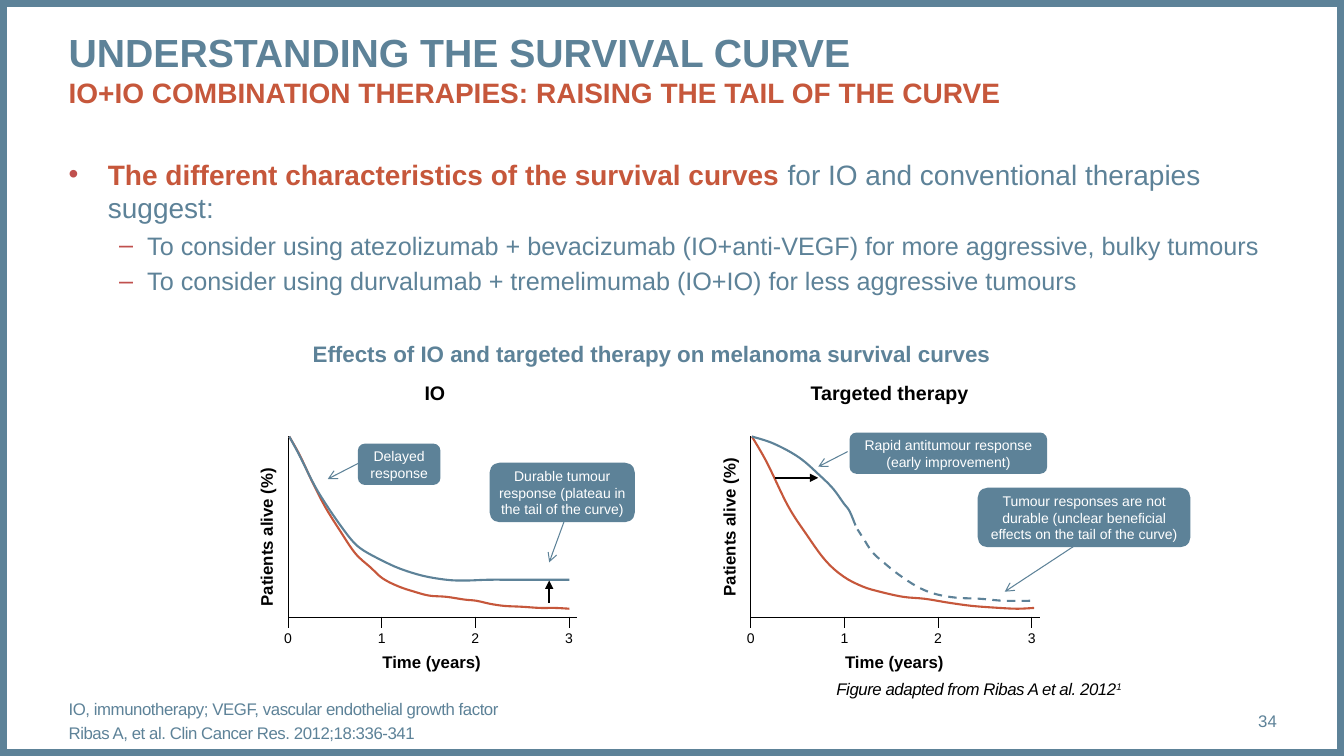
from lxml import etree
from pptx import Presentation
from pptx.dml.color import RGBColor
from pptx.enum import dml, shapes, text
from pptx.oxml import ns
from pptx.util import Cm, Pt

BLUE = RGBColor(0x5D, 0x82, 0x98)
RED = RGBColor(0xC6, 0x57, 0x3B)
BULLET = "C0504D"
BLACK = RGBColor(0, 0, 0)
WHITE = RGBColor(255, 255, 255)
LEFT, TOP, MIDDLE = text.PP_ALIGN.LEFT, text.MSO_ANCHOR.TOP, text.MSO_ANCHOR.MIDDLE
CENTER, RIGHT = text.PP_ALIGN.CENTER, text.PP_ALIGN.RIGHT
AXIS_TOP, AXIS_W, AXIS_H, YEAR = 11, 7.29, 4.57, 2.36

IO_CONTROL = [
    (0.03, 0), (0.3, 0.48), (0.61, 1.14), (0.94, 1.78), (1.32, 2.39), (1.7, 2.95),
    (2.08, 3.3), (2.39, 3.58), (2.79, 3.78), (3.18, 3.91), (3.56, 4.01), (3.99, 4.04),
    (4.45, 4.11), (4.75, 4.14), (5.11, 4.22), (5.46, 4.27), (5.89, 4.29), (6.35, 4.32),
    (6.73, 4.32), (7.09, 4.34)]
IO_TREATED = [
    (0.03, 0), (0.28, 0.46), (0.66, 1.22), (0.97, 1.73), (1.32, 2.24), (1.63, 2.64),
    (1.9, 2.87), (2.36, 3.12), (2.82, 3.33), (3.4, 3.51), (3.99, 3.61), (4.45, 3.63),
    (5.05, 3.61), (5.66, 3.61), (6.45, 3.61), (7.09, 3.61)]
TARGETED_CONTROL = [
    (0.03, 0), (0.41, 0.66), (0.94, 1.75), (1.4, 2.46), (1.88, 3.12), (2.34, 3.53),
    (2.82, 3.78), (3.25, 3.91), (3.84, 4.04), (4.39, 4.09), (5, 4.19), (5.59, 4.27),
    (6.27, 4.32), (6.73, 4.34), (7.14, 4.32)]
TARGETED_TREATED = [
    (0.03, 0), (0.58, 0.18), (1.22, 0.53), (1.75, 0.99), (2.08, 1.32), (2.34, 1.68),
    (2.49, 1.88), (2.64, 2.24)]
TARGETED_TAIL = [
    (7.04, 4.14), (6.38, 4.14), (5.79, 4.09), (5.16, 4.06), (4.62, 3.96), (4.19, 3.78),
    (3.73, 3.48), (3.38, 3.2), (3.07, 2.92), (2.84, 2.57), (2.69, 2.34)]


def add_run(p, words, size, color, bold=False, italic=False, **attrs):
    """Append one Arial run, with extra run attributes."""
    r = p.add_run()
    r.text = words
    f = r.font
    f.name, f.size, f.bold, f.italic = "Arial", Pt(size), bold, italic
    f.color.rgb = color
    for name, value in attrs.items():
        f._element.set(name, value)


def clear_margins(tf):
    """Remove the text margins of a frame."""
    tf.margin_left = tf.margin_right = tf.margin_top = tf.margin_bottom = 0


def add_box(slide, x, y, w, h, anchor=TOP, wrap=True):
    """Add a text box without margins."""
    sp = slide.shapes.add_textbox(Cm(x), Cm(y), Cm(w), Cm(h))
    tf = sp.text_frame
    clear_margins(tf)
    tf.word_wrap, tf.vertical_anchor = wrap, anchor
    return sp


def add_shape(slide, kind, x, y, w, h, color, anchor=MIDDLE):
    """Add a filled preset shape without a line."""
    sp = slide.shapes.add_shape(kind, Cm(x), Cm(y), Cm(w), Cm(h))
    sp.shadow.inherit = False
    sp.fill.solid()
    sp.fill.fore_color.rgb = color
    sp.line.fill.background()
    sp.text_frame.word_wrap, sp.text_frame.vertical_anchor = True, anchor
    return sp


def add_para(tf, align=LEFT, before=0):
    """Return the unused first paragraph or a new one."""
    p = tf.paragraphs[0] if not tf.paragraphs[0].runs else tf.add_paragraph()
    p.alignment, p.space_before = align, Pt(before)
    return p


def add_label(slide, cx, y, w, h, words, size, bold=True):
    """Add a black label centred on cx."""
    sp = add_box(slide, cx - w / 2, y, w, h, wrap=False)
    add_run(add_para(sp.text_frame, CENTER), words, size, BLACK, bold)
    return sp


def set_bullet(p, char, margin, hang):
    """Give a paragraph a coloured bullet and a hanging indent."""
    pPr = p._p.get_or_add_pPr()
    pPr.set("marL", str(Cm(margin)))
    pPr.set("indent", str(-Cm(hang)))
    color = etree.SubElement(pPr, ns.qn("a:buClr"))
    etree.SubElement(color, ns.qn("a:srgbClr"), val=BULLET)
    etree.SubElement(pPr, ns.qn("a:buFont"), typeface="Arial")
    etree.SubElement(pPr, ns.qn("a:buChar"), char=char)


def add_line(slide, start, end, color, width, head=None):
    """Add a straight line, optionally with an arrowhead at its end."""
    cn = slide.shapes.add_connector(
        shapes.MSO_CONNECTOR.STRAIGHT, *(Cm(v) for v in (*start, *end)))
    cn.line.color.rgb, cn.line.width = color, Pt(width)
    if head:
        etree.SubElement(cn.line._get_or_add_ln(), ns.qn("a:tailEnd"), type=head)
    etree.SubElement(cn._element.spPr, ns.qn("a:effectLst"))


def add_outline(slide, x, points, color, width, dash=None):
    """Draw an open outline from points relative to the axis top."""
    pts = [(Cm(x + px), Cm(AXIS_TOP + py)) for px, py in points]
    fb = slide.shapes.build_freeform(*pts[0], scale=1.0)
    fb.add_line_segments(pts[1:], close=False)
    sp = fb.convert_to_shape()
    sp.shadow.inherit = False
    sp.fill.background()
    sp.line.color.rgb, sp.line.width = color, Pt(width)
    if dash:
        sp.line.dash_style = dash
    return sp


def smooth(sp):
    """Turn the straight segments of an outline into Bézier curves."""
    pts = [(int(pt.get("x")), int(pt.get("y"))) for pt in sp._element.iter(ns.qn("a:pt"))]
    padded = [pts[0], *pts, pts[-1]]
    segments = list(sp._element.iter(ns.qn("a:lnTo")))
    for segment, a, b, c, d in zip(segments, padded, padded[1:], padded[2:], padded[3:]):
        outline = segment.getparent()
        outline.remove(segment)
        bezier = etree.SubElement(outline, ns.qn("a:cubicBezTo"))
        leave = [q + (r - p) / 6 for p, q, r in zip(a, b, c)]
        arrive = [q - (r - p) / 6 for p, q, r in zip(b, c, d)]
        for px, py in (leave, arrive, c):
            etree.SubElement(bezier, ns.qn("a:pt"), x=str(round(px)), y=str(round(py)))


def add_survival_plot(slide, x, title, title_w, label_y, curves):
    """Add axes, labels and survival curves with the origin at x."""
    add_label(slide, x + title_w / 2, 9.6, title_w, 0.61, title, 14)
    add_outline(slide, x, [(0, 0), (0, AXIS_H), (AXIS_W, AXIS_H)], BLACK, 0.75)
    for year in range(4):
        tick = x + year * YEAR
        add_line(slide, (tick, 15.54), (tick, 15.82), BLACK, 0.75)
        add_label(slide, tick, 15.86, 0.28, 0.64, str(year), 10, False)
    add_label(slide, x + 3.62, 16.42, 2.51, 0.51, "Time (years)", 12)
    add_label(slide, x - 0.55, label_y, 3.51, 0.51, "Patients alive (%)", 12).rotation = 270
    for points, color, dash in curves:
        smooth(add_outline(slide, x, points, color, 1.5, dash))


def add_callout(slide, x, y, w, h, lines, start, end, margin=0.25):
    """Add a rounded callout and the arrow that leads from it."""
    tf = add_shape(slide, shapes.MSO_SHAPE.ROUNDED_RECTANGLE, x, y, w, h, BLUE).text_frame
    tf.margin_left = tf.margin_right = Cm(margin)
    for line in lines:
        add_run(add_para(tf, CENTER), line, 10, WHITE)
    add_line(slide, start, end, BLUE, 0.75, "arrow")


def add_frame(prs, slide):
    """Add the border around the slide."""
    sp = slide.shapes.add_shape(
        shapes.MSO_SHAPE.RECTANGLE, 0, 0, prs.slide_width, prs.slide_height)
    sp.shadow.inherit = False
    sp.fill.background()
    sp.line.color.rgb, sp.line.width = BLUE, Pt(10)


def add_texts(slide):
    """Add the title, the bullets, the figure heading and the footer."""
    p = add_para(add_box(slide, 1.73, 0.71, 30.45, 2.39).text_frame)
    add_run(p, "UNDERSTANDING THE SURVIVAL CURVE", 28, BLUE, True)
    p.add_line_break()
    add_run(p, "IO+IO COMBINATION THERAPIES: RAISING THE TAIL OF THE CURVE", 20, RED, True)

    tf = add_box(slide, 1.73, 3.96, 31.01, 3.81).text_frame
    p = add_para(tf, before=12)
    add_run(p, "The different characteristics of the survival curves ", 20, RED, True)
    add_run(p, "for IO and conventional therapies suggest:", 20, BLUE)
    set_bullet(p, "•", 0.99, 0.99)
    for advice in ("atezolizumab + bevacizumab (IO+anti-VEGF) for more aggressive, bulky tumours",
                   "durvalumab + tremelimumab (IO+IO) for less aggressive tumours"):
        p = add_para(tf, before=4)
        add_run(p, "To consider using " + advice, 18, BLUE)
        set_bullet(p, "–", 1.98, 0.71)

    tf = add_shape(slide, shapes.MSO_SHAPE.RECTANGLE, 7.88, 8.56, 22.07, 0.69, WHITE, TOP).text_frame
    clear_margins(tf)
    add_run(add_para(tf), "Effects of IO and targeted therapy on melanoma survival curves", 16, BLUE, True)

    tf = add_box(slide, 1.73, 17.65, 28.27, 1.02, MIDDLE).text_frame
    for note in ("IO, immunotherapy; VEGF, vascular endothelial growth factor",
                 "Ribas A, et al. Clin Cancer Res. 2012;18:336-341"):
        add_run(add_para(tf, before=3), note, 12, BLUE, spc="-30")

    tf = add_box(slide, 29.21, 17.65, 2.97, 1.02, MIDDLE).text_frame
    add_run(add_para(tf, RIGHT), "34", 12, BLUE)

    p = add_para(add_box(slide, 21.08, 16.84, 7.29, 1.02, MIDDLE).text_frame, before=3)
    add_run(p, "Figure adapted from Ribas A et al. 2012", 12, BLACK, italic=True, spc="-30")
    add_run(p, "1", 12, BLACK, italic=True, spc="-30", baseline="30000")


def main():
    """Build the survival curve slide."""
    prs = Presentation()
    prs.slide_width, prs.slide_height = Cm(33.87), Cm(19.05)
    slide = prs.slides.add_slide(prs.slide_layouts[6])
    add_frame(prs, slide)
    add_texts(slide)
    add_survival_plot(slide, 7.26, "IO", 7.4, 13.28, [
        (IO_CONTROL, RED, None), (IO_TREATED, BLUE, None)])
    add_survival_plot(slide, 18.92, "Targeted therapy", 7, 13.03, [
        (TARGETED_CONTROL, RED, None), (TARGETED_TREATED, BLUE, None),
        (TARGETED_TAIL, BLUE, dml.MSO_LINE.DASH)])
    add_line(slide, (13.84, 15.19), (13.84, 14.63), BLACK, 1.5, "triangle")
    add_line(slide, (19.53, 12.04), (20.62, 12.04), BLACK, 1.5, "triangle")
    add_callout(slide, 9.02, 11.18, 2.08, 1.04, ["Delayed", "response"], (9.02, 11.68), (8.26, 12.07))
    add_callout(slide, 12.34, 11.66, 3.66, 1.5, ["Durable tumour response (plateau in the tail of the curve)"],
                (14.22, 13.13), (13.84, 14.17), 0.1)
    add_callout(slide, 21.41, 10.9, 4.98, 1.04, ["Rapid antitumour response (early improvement)"],
                (21.36, 11.38), (20.62, 11.76))
    add_callout(slide, 24.64, 12.29, 5.36, 1.5,
                ["Tumour responses are not durable (unclear beneficial effects on the tail of the curve)"],
                (27.13, 13.72), (25.32, 14.91))
    prs.save("out.pptx")


if __name__ == "__main__":
    main()
